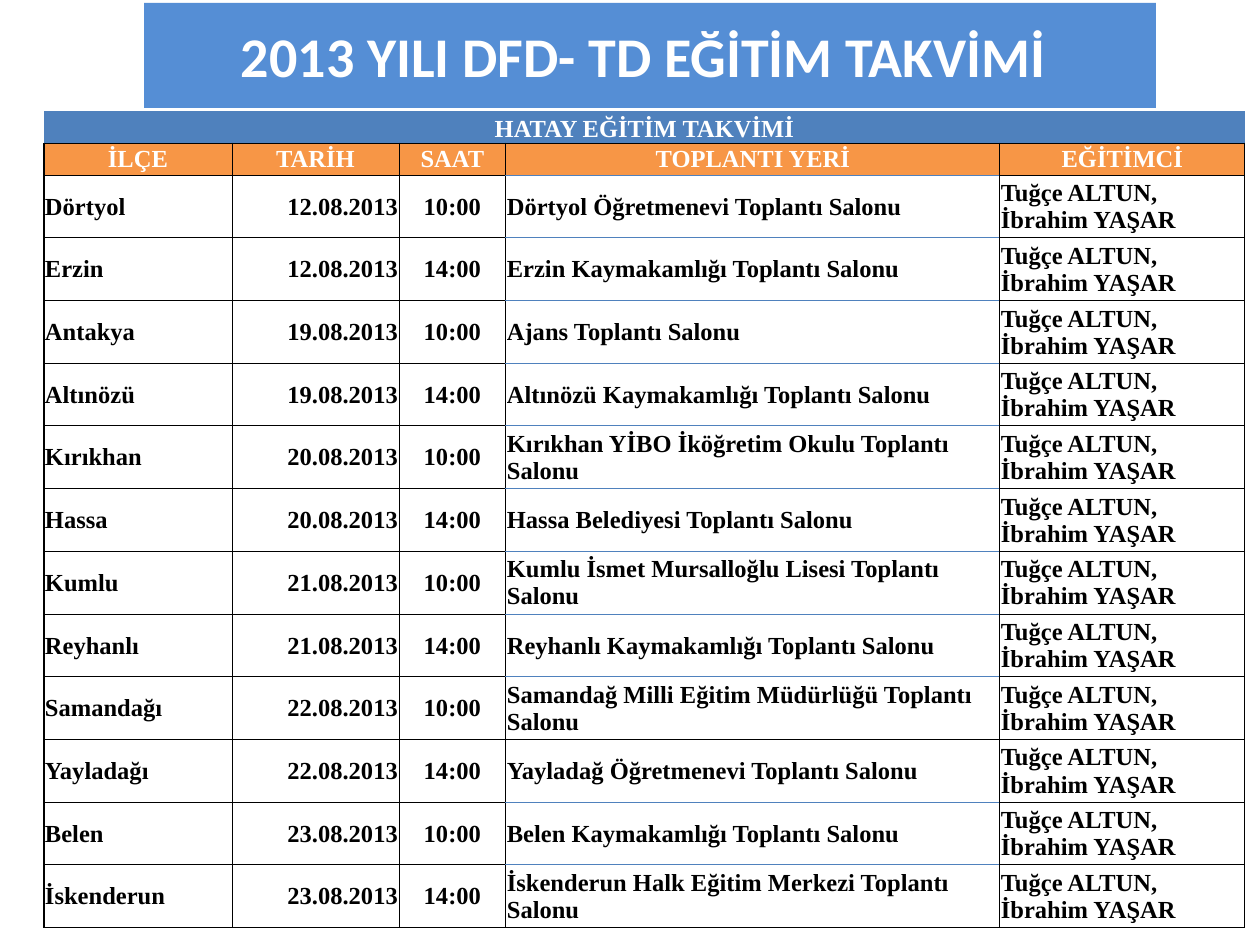
from lxml import etree
from pptx import Presentation
from pptx.dml.color import RGBColor
from pptx.enum.text import MSO_ANCHOR, MSO_AUTO_SIZE, PP_ALIGN
from pptx.oxml.ns import qn
from pptx.util import Pt

LEFT, MID, RIGHT = PP_ALIGN.LEFT, PP_ALIGN.CENTER, PP_ALIGN.RIGHT
MIDDLE, BOTTOM = MSO_ANCHOR.MIDDLE, MSO_ANCHOR.BOTTOM
GROW = MSO_AUTO_SIZE.SHAPE_TO_FIT_TEXT

PX = 914400 // 126
BLACK, WHITE, BLUE, ORANGE, SKY = "000000", "FFFFFF", "4F81BD", "F79646", "558ED5"

TITLE = "2013 YILI DFD- TD EĞİTİM TAKVİMİ "
BANNER = "HATAY EĞİTİM TAKVİMİ"
HEADS = ["İLÇE", "TARİH", "SAAT", "TOPLANTI YERİ", "EĞİTİMCİ"]
TRAINERS = "Tuğçe ALTUN, İbrahim YAŞAR"
SESSIONS = [
    ("Dörtyol", "12.08.2013", "10:00", "Dörtyol Öğretmenevi Toplantı Salonu"),
    ("Erzin", "12.08.2013", "14:00", "Erzin Kaymakamlığı Toplantı Salonu"),
    ("Antakya", "19.08.2013", "10:00", "Ajans Toplantı Salonu"),
    ("Altınözü", "19.08.2013", "14:00", "Altınözü Kaymakamlığı Toplantı Salonu"),
    ("Kırıkhan", "20.08.2013", "10:00", "Kırıkhan YİBO İköğretim Okulu Toplantı Salonu"),
    ("Hassa", "20.08.2013", "14:00", "Hassa Belediyesi Toplantı Salonu"),
    ("Kumlu", "21.08.2013", "10:00", "Kumlu İsmet Mursalloğlu Lisesi Toplantı Salonu"),
    ("Reyhanlı", "21.08.2013", "14:00", "Reyhanlı Kaymakamlığı Toplantı Salonu"),
    ("Samandağı", "22.08.2013", "10:00", "Samandağ Milli Eğitim Müdürlüğü Toplantı Salonu"),
    ("Yayladağı", "22.08.2013", "14:00", "Yayladağ Öğretmenevi Toplantı Salonu"),
    ("Belen", "23.08.2013", "10:00", "Belen Kaymakamlığı Toplantı Salonu"),
    ("İskenderun", "23.08.2013", "14:00", "İskenderun Halk Eğitim Merkezi Toplantı Salonu"),
]
ALIGNS = [LEFT, RIGHT, MID, LEFT, LEFT]
WIDTHS = [188, 167, 107, 494, 245]
HEAD_H, BODY_H = 32, 753
VENUE = HEADS.index("TOPLANTI YERİ")
BLACK_RULES = {10, 13}  # table rows whose venue cell has a black lower edge


def rgb(code):
    return RGBColor.from_string(code)


def write(frame, text, font="Times New Roman", size=14, color=BLACK, align=LEFT):
    para = frame.paragraphs[0]
    para.alignment = align
    run = para.add_run()
    run.text = text
    run.font.name = font
    run.font.size = Pt(size)
    run.font.bold = True
    run.font.color.rgb = rgb(color)


def rule(cell, side, color=BLACK, width=0.5):
    """Draw one cell edge (L, R, T or B); no colour hides it."""
    line = etree.SubElement(cell._tc.get_or_add_tcPr(), qn(f"a:ln{side}"), w=str(Pt(width)))
    if color:
        fill = etree.SubElement(line, qn("a:solidFill"))
        etree.SubElement(fill, qn("a:srgbClr"), val=color)
    else:
        etree.SubElement(line, qn("a:noFill"))


def frame_cell(cell, row, col):
    last = row == len(SESSIONS) + 1
    for side in "LRTB":
        color, width = BLACK, 0.5
        if row == 0 and side != "B":
            color = None
        elif row and col == 0 and (side == "L" or side == "B" and last):
            width = 1
        elif row and col == VENUE and side in "TB":
            edge = row if side == "B" else row - 1
            if edge and edge not in BLACK_RULES:
                color = BLUE
        rule(cell, side, color, width)


def add_title(slide):
    box = slide.shapes.title
    box.left, box.top, box.width, box.height = [n * PX for n in (144, 15, 1012, 81)]
    box.fill.solid()
    box.fill.fore_color.rgb = rgb(SKY)
    frame = box.text_frame
    frame.word_wrap = True
    frame.auto_size = GROW
    frame.vertical_anchor = MIDDLE
    write(frame, TITLE, font="Calibri", size=32, color=WHITE, align=MID)


def add_schedule(slide):
    rows = [[BANNER] + [""] * 4, HEADS] + [[*item, TRAINERS] for item in SESSIONS]
    heights = [HEAD_H * PX] * 2 + [BODY_H * PX // len(SESSIONS)] * len(SESSIONS)
    table = slide.shapes.add_table(len(rows), len(HEADS), 44 * PX, 111 * PX,
                                   sum(WIDTHS) * PX, sum(heights)).table
    table.first_row = table.horz_banding = False
    for col, width in zip(table.columns, WIDTHS):
        col.width = width * PX
    for row, height in zip(table.rows, heights):
        row.height = height
    for r, texts in enumerate(rows):
        for c, text in enumerate(texts):
            cell = table.cell(r, c)
            frame_cell(cell, r, c)
            cell.margin_left = cell.margin_right = cell.margin_top = PX
            cell.margin_bottom = 0
            cell.vertical_anchor = MIDDLE if r else BOTTOM
            if r < 2:
                cell.fill.solid()
                cell.fill.fore_color.rgb = rgb(ORANGE if r else BLUE)
            else:
                cell.fill.background()
            if text:
                write(cell.text_frame, text, color=WHITE if r < 2 else BLACK,
                      align=MID if r < 2 else ALIGNS[c])
    table.cell(0, 0).merge(table.cell(0, len(HEADS) - 1))


def main():
    deck = Presentation()
    deck.slide_width, deck.slide_height = 1260 * PX, 945 * PX
    slide = deck.slides.add_slide(deck.slide_layouts[5])
    add_title(slide)
    add_schedule(slide)
    deck.save("out.pptx")


if __name__ == "__main__":
    main()
